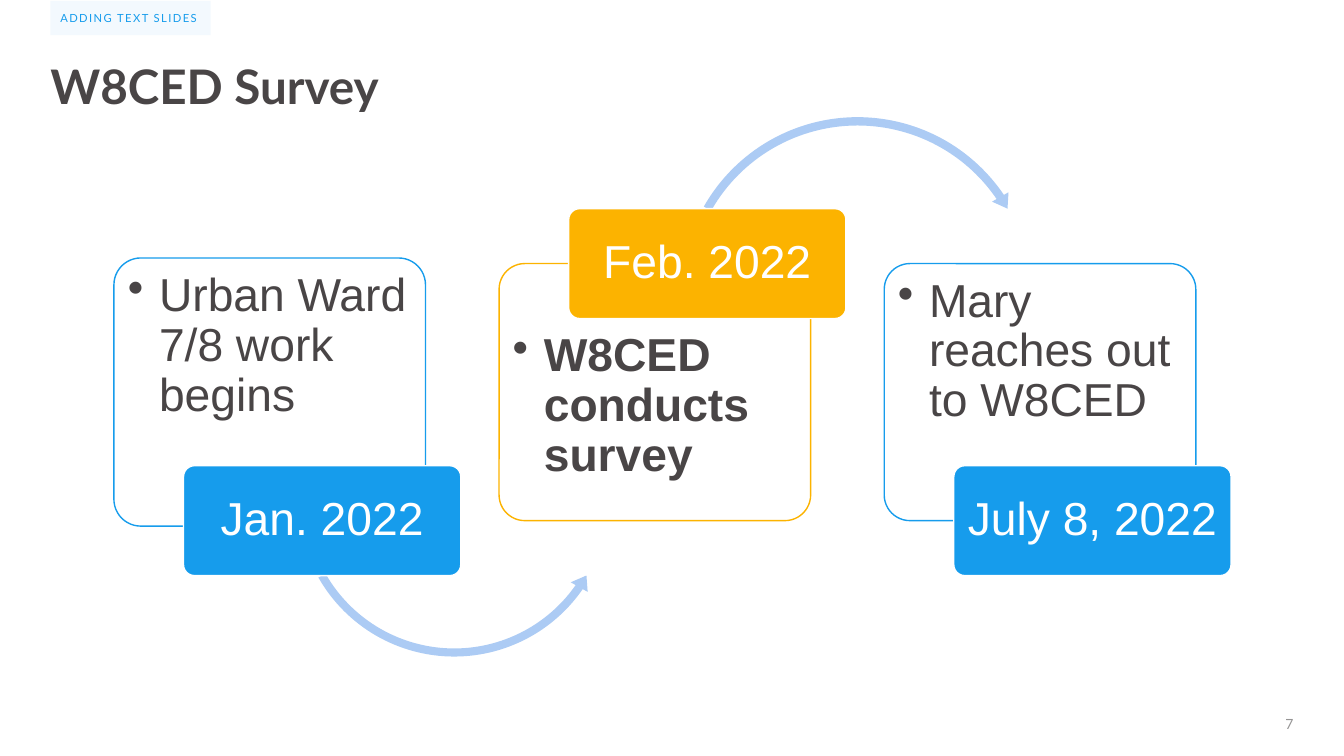
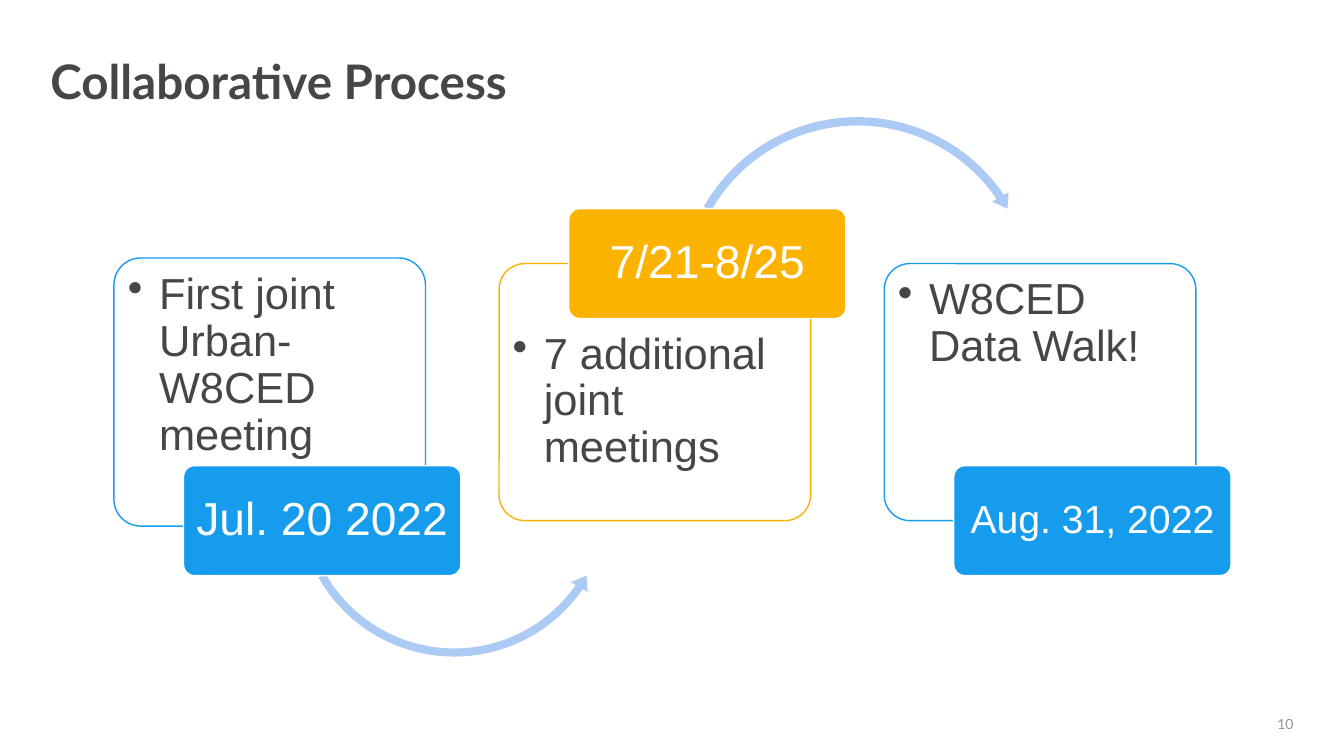
from lxml import etree
from pptx import Presentation
from pptx.dml.color import RGBColor
from pptx.enum import shapes, text
from pptx.oxml import ns
from pptx.util import Inches, Pt

COLORS = {
    "ink": "494546",
    "blue": "169CEC",
    "gold": "FCB300",
    "arrow": "ACCBF4",
    "white": "FFFFFF",
    "grey": "959494",
}
SHAPE = shapes.MSO_SHAPE
ALIGN = text.PP_ALIGN
ANCHOR = text.MSO_ANCHOR

DIAGRAM = (1.13, 2.07, 11.08, 3.64)
CARD_W, CARD_H = 3.09, 2.55
FIRST_CARD_H = 2.66
TILE_W, TILE_H = 2.75, 1.09
CARD_PITCH = 3.82
TILE_SHIFT = 0.69
ARROWS = [
    (SHAPE.LEFT_CIRCULAR_ARROW, 1.77, 1.29, 3.21,
     (0.025, 3.094, 20.844, 90.24, 0.03)),
    (SHAPE.CIRCULAR_ARROW, 5.57, -0.96, 3.61,
     (0.023, 2.738, 195.507, 125.755, 0.026)),
]

SLIDES = [
    {
        "title": "W8CED Survey", "title_box": (0.5, 0.58, 4.17, 1.27),
        "tag": "ADDING TEXT SLIDES", "number": "7", "card_size": 33,
        "steps": [
            ("Urban Ward 7/8 work begins", False, "Jan. 2022", 33),
            ("W8CED conducts survey", True, "Feb. 2022", 33),
            ("Mary reaches out to W8CED", False, "July 8, 2022", 33),
        ],
    },
    {
        "title": "Collaborative Process", "title_box": (0.5, 0.53, 12.33, 1.27),
        "tag": None, "number": "10", "card_size": 31,
        "steps": [
            ("First joint Urban-W8CED meeting", False, "Jul. 20 2022", 33),
            ("7 additional joint meetings", False, "7/21-8/25", 33),
            ("W8CED Data Walk!", False, "Aug. 31, 2022", 28),
        ],
    },
]


def rgb(name):
    """Return the named colour."""
    return RGBColor.from_string(COLORS[name])


def add_shape(slide, kind, box, fill, line=None, alpha=None, adjust=()):
    """Add a flat preset shape with an optional outline and opacity percent."""
    sp = slide.shapes.add_shape(kind, *map(Inches, box))
    sp.shadow.inherit = False
    for i, value in enumerate(adjust):
        sp.adjustments[i] = value
    sp.fill.solid()
    sp.fill.fore_color.rgb = rgb(fill)
    if alpha is not None:
        color = sp._element.spPr.find(ns.qn("a:solidFill"))[0]
        etree.SubElement(color, ns.qn("a:alpha"), val=str(alpha * 1000))
    if line:
        sp.line.color.rgb = rgb(line)
        sp.line.width = Pt(1)
    else:
        sp.line.fill.background()
    return sp


def write(sp, words, size, color, font="Arial", bold=False, align=ALIGN.LEFT,
          anchor=ANCHOR.TOP, insets=(0, 0, 0, 0), spacing=0.9, wrap=True):
    """Fill a shape with one formatted paragraph and return it."""
    tf = sp.text_frame
    tf.text = words
    tf.word_wrap = wrap
    tf.vertical_anchor = anchor
    (tf.margin_left, tf.margin_top,
     tf.margin_right, tf.margin_bottom) = map(Inches, insets)
    p = tf.paragraphs[0]
    p.alignment = align
    p.line_spacing = spacing
    r = p.runs[0]
    r.font.name = font
    r.font.size = Pt(size)
    r.font.bold = bold
    r.font.color.rgb = rgb(color)
    return p


def add_bullet(p, indent):
    """Give a paragraph a hanging bullet."""
    pPr = p._p.get_or_add_pPr()
    pPr.set("marL", str(Inches(indent)))
    pPr.set("indent", str(-Inches(indent)))
    etree.SubElement(pPr, ns.qn("a:buChar"), char="•")


def add_frame(slide, content):
    """Add the slide number, title and optional section tag."""
    number = slide.shapes.add_textbox(*map(Inches, (9.83, 7.07, 3, 0.23)))
    write(number, content["number"], 10, "grey", "Lato", align=ALIGN.RIGHT,
          anchor=ANCHOR.MIDDLE, spacing=1.0)
    title = slide.shapes.add_textbox(*map(Inches, content["title_box"]))
    write(title, content["title"], 34, "ink", "Lato", bold=True,
          insets=(0, 0.05, 0, 0.05))
    if content["tag"]:
        tag = add_shape(slide, SHAPE.RECTANGLE, (0.5, 0.01, 1.59, 0.34),
                        "blue", alpha=5)
        p = write(tag, content["tag"], 8, "blue", "Lato", anchor=ANCHOR.MIDDLE,
                  insets=(0.1,) * 4, spacing=1.0, wrap=False)
        p.runs[0]._r.get_or_add_rPr().set("spc", "100")


def add_step(slide, box, index, step, card_size):
    """Add one card with its date tile centred on the card's edge."""
    left, top, _, height = box
    words, bold, date, date_size = step
    raised = index % 2 == 1
    color = "gold" if raised else "blue"
    x = left + index * CARD_PITCH
    card_h = CARD_H if index else FIRST_CARD_H
    card_y = top + (height - card_h) / 2
    card = add_shape(slide, SHAPE.ROUNDED_RECTANGLE,
                     (x, card_y, CARD_W, card_h), "white", color, 90, (0.1,))
    text_top = 0.6 if raised else 0.06
    p = write(card, words, card_size, "ink", bold=bold,
              insets=(0.06, text_top, 0.05, 0.05))
    add_bullet(p, 0.31)
    if index < len(ARROWS):
        kind, dx, dy, side, adjust = ARROWS[index]
        add_shape(slide, kind, (left + dx, top + dy, side, side), "arrow",
                  adjust=adjust)
    tile_y = top if raised else top + height - TILE_H
    tile = add_shape(slide, SHAPE.ROUNDED_RECTANGLE,
                     (x + TILE_SHIFT, tile_y, TILE_W, TILE_H),
                     color, "white", adjust=(0.1,))
    write(tile, date, date_size, "white", align=ALIGN.CENTER,
          anchor=ANCHOR.MIDDLE, insets=(0.07, 0.05, 0.07, 0.05))


def add_timeline_slide(prs, content):
    """Build a slide with a three-step timeline."""
    slide = prs.slides.add_slide(prs.slide_layouts[6])
    add_frame(slide, content)
    for i, step in enumerate(content["steps"]):
        add_step(slide, DIAGRAM, i, step, content["card_size"])


def main():
    """Build and save the presentation."""
    prs = Presentation()
    prs.slide_width, prs.slide_height = Inches(13.33), Inches(7.5)
    for content in SLIDES:
        add_timeline_slide(prs, content)
    prs.save("out.pptx")


if __name__ == "__main__":
    main()
